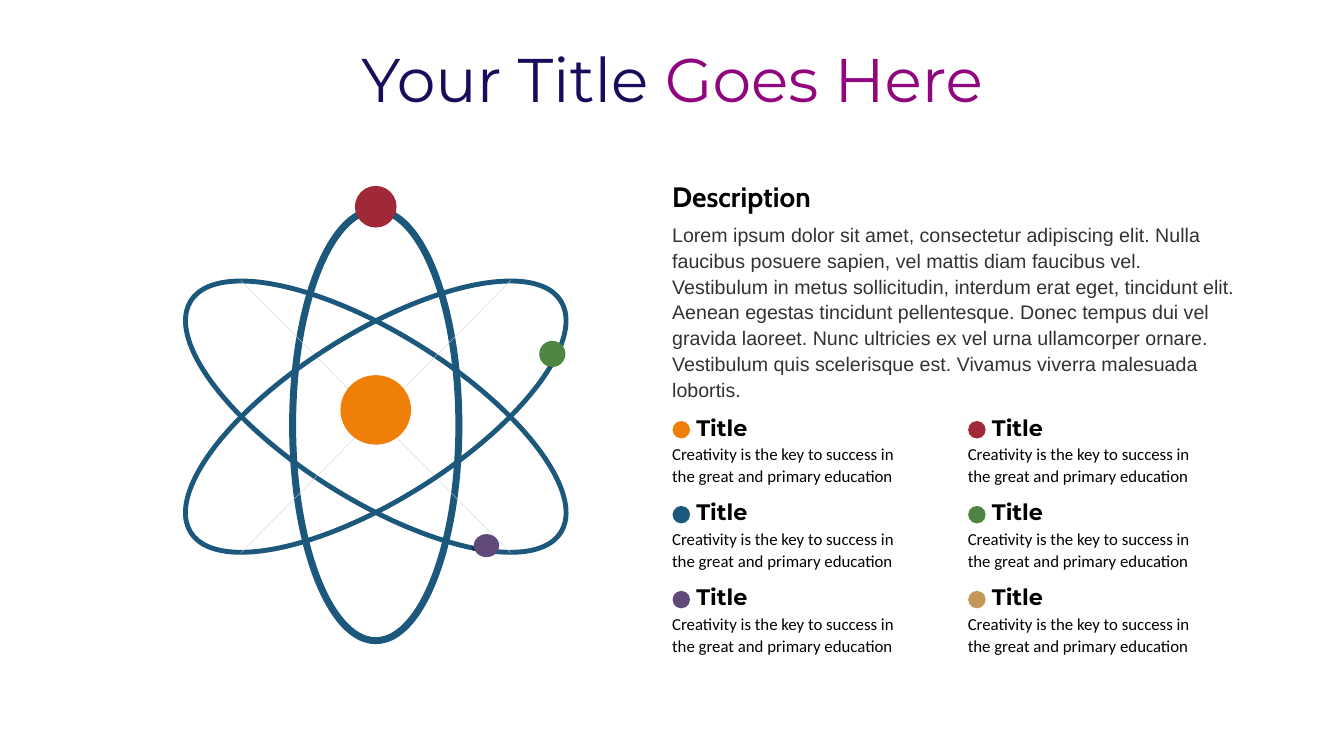
from pptx import Presentation
from pptx.dml.color import RGBColor
from pptx.enum.shapes import MSO_CONNECTOR, MSO_SHAPE
from pptx.enum.text import MSO_ANCHOR, MSO_AUTO_SIZE, PP_ALIGN
from pptx.oxml.ns import qn
from pptx.util import Cm, Pt
from lxml import etree

OVAL = MSO_SHAPE.OVAL
STRAIGHT = MSO_CONNECTOR.STRAIGHT
MIDDLE = MSO_ANCHOR.MIDDLE
FIT_SHAPE = MSO_AUTO_SIZE.SHAPE_TO_FIT_TEXT
CENTER = PP_ALIGN.CENTER

BLACK = RGBColor(0x00, 0x00, 0x00)
GRAY = RGBColor(0x32, 0x32, 0x32)
NAVY = RGBColor(0x17, 0x0E, 0x5B)
MAGENTA = RGBColor(0x8F, 0x06, 0x7E)
BLUE = RGBColor(0x1B, 0x58, 0x7C)
DARK_BLUE = RGBColor(0x07, 0x33, 0x46)
PALE_BLUE = RGBColor(0xC6, 0xD5, 0xDE)
ORANGE = RGBColor(0xF0, 0x7F, 0x09)
RED = RGBColor(0x9F, 0x29, 0x36)
GREEN = RGBColor(0x4E, 0x85, 0x42)
PURPLE = RGBColor(0x60, 0x48, 0x78)
TAN = RGBColor(0xC1, 0x98, 0x59)

DESCRIPTION = (
    "Lorem ipsum dolor sit amet, consectetur adipiscing elit. Nulla faucibus "
    "posuere sapien, vel mattis diam faucibus vel. Vestibulum in metus "
    "sollicitudin, interdum erat eget, tincidunt elit. Aenean egestas tincidunt "
    "pellentesque. Donec tempus dui vel gravida laoreet. Nunc ultricies ex vel "
    "urna ullamcorper ornare. Vestibulum quis scelerisque est. Vivamus viverra "
    "malesuada lobortis."
)
ITEM_TEXT = "Creativity is the key to success in the great and primary education"
ITEM_COLORS = [[ORANGE, RED], [BLUE, GREEN], [PURPLE, TAN]]


def fill_plain(sp, color):
    sp.shadow.inherit = False
    sp.fill.solid()
    sp.fill.fore_color.rgb = color
    sp.line.fill.background()


def add_oval(slide, cx, cy, width, height):
    """Add an ellipse around a centre; all lengths in cm."""
    sp = slide.shapes.add_shape(OVAL, Cm(cx - width / 2), Cm(cy - height / 2),
                                Cm(width), Cm(height))
    sp.shadow.inherit = False
    return sp


def add_ball(slide, cx, cy, width, height, color):
    fill_plain(add_oval(slide, cx, cy, width, height), color)


def add_orbit(slide, cx, cy, width, height, weight, tilt=0):
    sp = add_oval(slide, cx, cy, width, height)
    sp.rotation = tilt
    sp.fill.background()
    sp.line.color.rgb = BLUE
    sp.line.width = Pt(weight)


def add_hairline(slide, x1, y1, x2, y2):
    line = slide.shapes.add_connector(STRAIGHT, Cm(x1), Cm(y1), Cm(x2), Cm(y2))
    line.line.color.rgb = PALE_BLUE
    line.line.width = Pt(0.25)
    etree.SubElement(line._element.spPr, qn("a:effectLst"))


def add_shade(slide, left, top, points):
    """Add the dark sliver of orbit beneath an electron."""
    corners = [(Cm(left + x), Cm(top + y)) for x, y in points]
    builder = slide.shapes.build_freeform(*corners[0])
    builder.add_line_segments(corners[1:])
    fill_plain(builder.convert_to_shape(), DARK_BLUE)


def add_text(slide, left, top, width, height, text, font, size, color,
             bold=False, wrap=True, spacing=1.0, inset=0.25):
    """Add a one-paragraph text box; lengths in cm, size in points."""
    tf = slide.shapes.add_textbox(Cm(left), Cm(top), Cm(width), Cm(height)).text_frame
    tf.word_wrap = wrap
    tf.auto_size = FIT_SHAPE
    tf.margin_left = tf.margin_right = Cm(inset)
    tf.margin_top = tf.margin_bottom = Cm(inset / 2)
    p = tf.paragraphs[0]
    p.text = text
    p.line_spacing = spacing
    p.font.name = font
    p.font.size = Pt(size)
    p.font.bold = bold
    p.font.color.rgb = color


def add_title(slide, left, top, width, height):
    tf = slide.shapes.add_textbox(Cm(left), Cm(top), Cm(width), Cm(height)).text_frame
    tf.word_wrap = True
    tf.vertical_anchor = MIDDLE
    p = tf.paragraphs[0]
    p.alignment = CENTER
    p.line_spacing = 0.9
    p.font.name = "Montserrat"
    p.font.size = Pt(44)
    for text, color in (("Your Title ", NAVY), ("Goes Here", MAGENTA)):
        r = p.add_run()
        r.text = text
        r.font.color.rgb = color


def add_atom(slide, left, top, width, height):
    cx, cy = left + width / 2, top + height / 2
    add_orbit(slide, cx, cy + 0.25, 4.19, 10.85, 5)
    for side in (1, -1):
        add_orbit(slide, cx, cy + 0.03, 11, 4.21, 3.5, side * 32)
        add_hairline(slide, cx - 3.4, cy + 0.03 - side * 3.43,
                     cx + 3.4, cy + 0.03 + side * 3.43)
    add_ball(slide, cx, cy - 0.14, 1.78, 1.75, ORANGE)
    add_shade(slide, left, top, [(9.45, 4.02), (9.19, 4.52), (9.27, 4.6), (9.57, 4.04)])
    add_ball(slide, left + 9.32, top + 4.25, 0.66, 0.66, GREEN)
    add_shade(slide, left, top, [(7.29, 9.1), (7.31, 9.2), (7.85, 9.3), (7.9, 9.17)])
    add_ball(slide, left + 7.66, top + 9.08, 0.64, 0.58, PURPLE)
    add_ball(slide, cx, top + 0.54, 1.05, 1.05, RED)


def add_description(slide, left, top, width):
    add_text(slide, left, top, 4.14, 1.12, "Description", "Cabin", 20, BLACK,
             bold=True, wrap=False)
    add_text(slide, left, top + 1.04, width, 4.17, DESCRIPTION, "Arial", 14, GRAY,
             spacing=1.1)


def add_item(slide, left, top, width, color):
    add_text(slide, left + 0.66, top, 1.93, 0.94, "Title", "Montserrat", 16, BLACK,
             bold=True, wrap=False)
    add_text(slide, left, top + 0.69, width, 1.4, ITEM_TEXT, "Calibri", 12, BLACK,
             spacing=1.1, inset=0.3)
    add_ball(slide, left + 0.53, top + 0.53, 0.44, 0.44, color)


def add_legend(slide, left, top, col_step, row_step):
    for row, colors in enumerate(ITEM_COLORS):
        for col, color in enumerate(colors):
            add_item(slide, left + col * col_step, top + row * row_step, 6.53, color)


def main():
    prs = Presentation()
    prs.slide_width, prs.slide_height = Cm(33.87), Cm(19.05)
    slide = prs.slides.add_slide(prs.slide_layouts[6])
    add_atom(slide, 4.6, 4.67, 9.74, 11.6)
    add_description(slide, 16.69, 4.39, 14.86)
    add_legend(slide, 16.64, 10.3, 7.45, 2.14)
    add_title(slide, 2.34, 1.02, 29.21, 2.13)
    prs.save("out.pptx")


if __name__ == "__main__":
    main()
